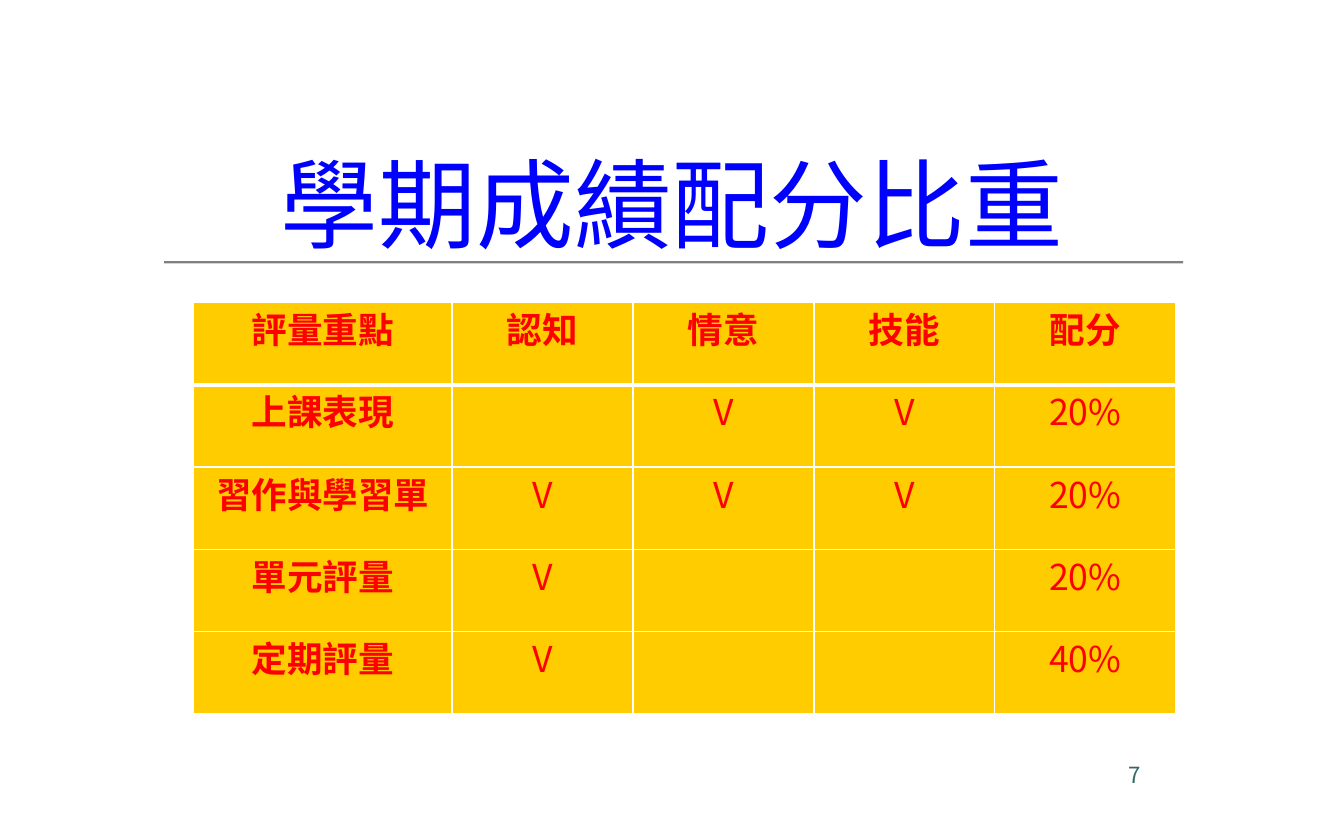
from lxml import etree
from pptx import Presentation
from pptx.dml.color import RGBColor
from pptx.enum.shapes import MSO_SHAPE
from pptx.enum.text import MSO_ANCHOR, PP_ALIGN
from pptx.oxml.ns import qn
from pptx.util import Cm, Pt

RECTANGLE = MSO_SHAPE.RECTANGLE
TOP, MIDDLE = MSO_ANCHOR.TOP, MSO_ANCHOR.MIDDLE
LEFT, CENTER = PP_ALIGN.LEFT, PP_ALIGN.CENTER

# Content
TITLE = "學期成績配分比重"
PAGE_NUMBER = "7"
GRADING = [
    ("評量重點", "認知", "情意", "技能", "配分"),
    ("上課表現", "", "V", "V", "20%"),
    ("習作與學習單", "V", "V", "V", "20%"),
    ("單元評量", "V", "", "", "20%"),
    ("定期評量", "V", "", "", "40%"),
]

# Look and measures (cm)
FONT = "Noto Sans CJK SC"
BLUE, RED, GOLD, GREY, TEAL, WHITE = (
    "0000FF", "FF0000", "FFCC00", "808080", "336666", "FFFFFF")
SLIDE_W, SLIDE_H = 32, 20
FOCUS_W, SCORE_W, ROW_H = 6.15, 4.31, 1.96


def color(hex_code):
    return RGBColor.from_string(hex_code)


def write(frame, text, size, hex_code, align, bold=False):
    frame.text = text
    paragraph = frame.paragraphs[0]
    paragraph.alignment = align
    for run in paragraph.runs:
        run.font.size = Pt(size)
        run.font.bold = bold
        run.font.name = FONT
        run.font.color.rgb = color(hex_code)
        etree.SubElement(run.font._element, qn("a:ea"), typeface=FONT)


def add_text(slide, box, text, size, hex_code, align, anchor):
    frame = slide.shapes.add_textbox(*map(Cm, box)).text_frame
    frame.word_wrap = True
    frame.vertical_anchor = anchor
    write(frame, text, size, hex_code, align)


def add_border(cell, side, width):
    line = etree.SubElement(cell._tc.get_or_add_tcPr(), qn(f"a:ln{side}"),
                            w=str(Pt(width)))
    fill = etree.SubElement(line, qn("a:solidFill"))
    etree.SubElement(fill, qn("a:srgbClr"), val=WHITE)


def add_grading_table(slide):
    rows, cols = len(GRADING), len(GRADING[0])
    widths = [FOCUS_W] + [SCORE_W] * (cols - 1)
    table = slide.shapes.add_table(rows, cols, Cm(4.61), Cm(7.2),
                                   Cm(sum(widths)), Cm(ROW_H * rows)).table
    for column, width in zip(table.columns, widths):
        column.width = Cm(width)
    for r, values in enumerate(GRADING):
        table.rows[r].height = Cm(ROW_H)
        for c, value in enumerate(values):
            cell = table.cell(r, c)
            cell.margin_left = cell.margin_right = Cm(0.18)
            cell.margin_top = cell.margin_bottom = 0
            # The line under the header is heavier
            for side in "LRTB":
                under_header = (r, side) in ((0, "B"), (1, "T"))
                add_border(cell, side, 3 if under_header else 1)
            cell.fill.solid()
            cell.fill.fore_color.rgb = color(GOLD)
            write(cell.text_frame, value, 24, RED, CENTER,
                  bold=r == 0 or c == 0)


def main():
    prs = Presentation()
    prs.slide_width, prs.slide_height = Cm(SLIDE_W), Cm(SLIDE_H)
    slide = prs.slides.add_slide(prs.slide_layouts[6])

    # Rule under the title
    rule = slide.shapes.add_shape(RECTANGLE, Cm(3.91), Cm(6.22),
                                  Cm(24.26), Cm(0.05))
    rule.shadow.inherit = False
    rule.fill.solid()
    rule.fill.fore_color.rgb = color(GREY)
    rule.line.fill.background()

    # Title, page number and table
    add_text(slide, (0, 3.48, SLIDE_W, 2.67), TITLE, 66, BLUE, CENTER, MIDDLE)
    add_text(slide, (26.62, 18, 4.52, 1.32), PAGE_NUMBER, 15, TEAL, LEFT, TOP)
    add_grading_table(slide)

    prs.save("out.pptx")


if __name__ == "__main__":
    main()
